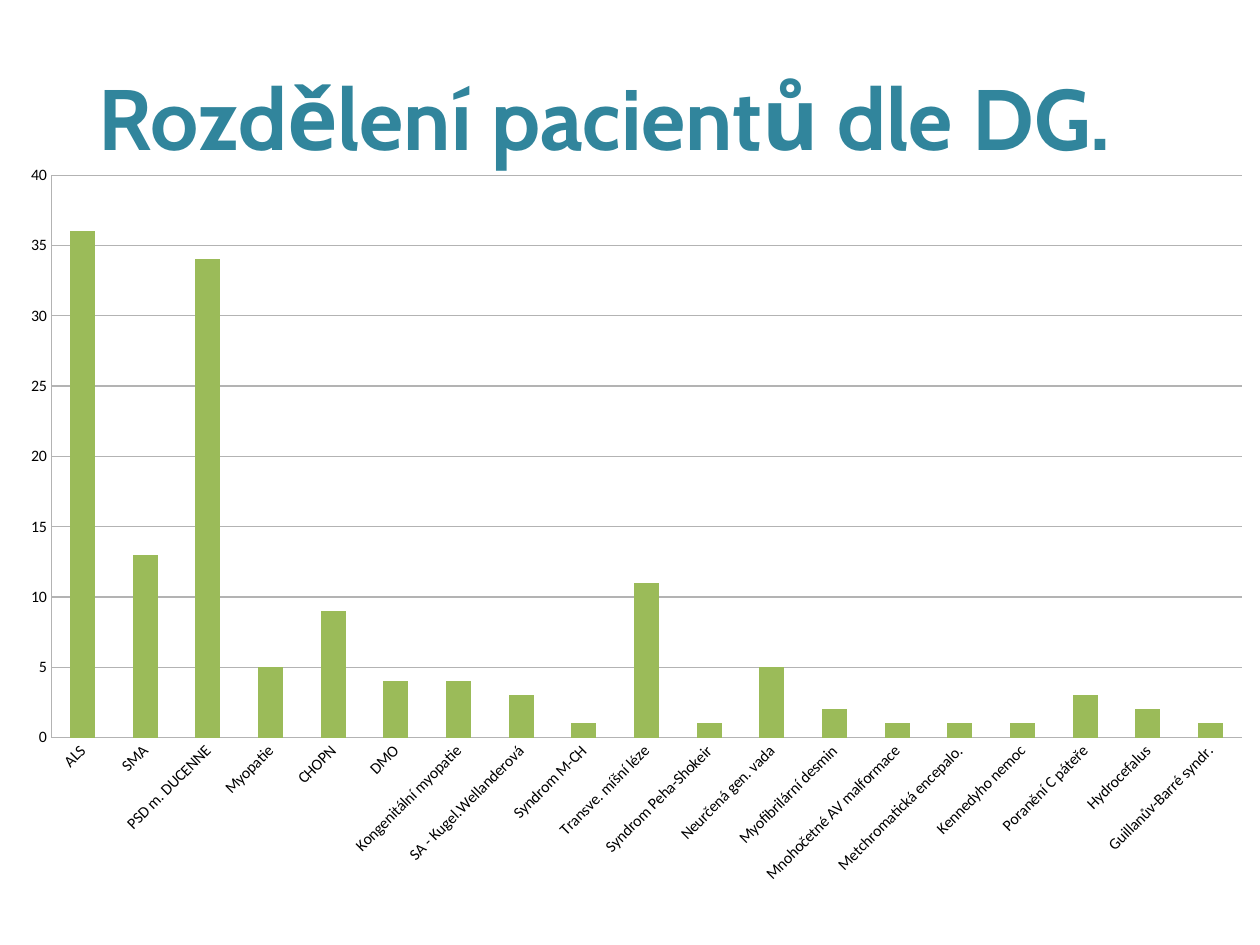
from lxml import etree
from pptx import Presentation
from pptx.chart.data import CategoryChartData
from pptx.dml.color import RGBColor
from pptx.enum.chart import XL_CHART_TYPE as ChartType, XL_TICK_MARK as TickMark
from pptx.enum.text import MSO_ANCHOR as Anchor, PP_ALIGN as Align
from pptx.oxml.ns import qn
from pptx.util import Cm, Inches, Pt

COLORS = {
    name: RGBColor.from_string(value)
    for name, value in {
        "title": "31859C", "bars": "9BBB59", "lines": "B3B3B3", "labels": "000000",
    }.items()
}

PATIENTS = {
    "ALS": 36,
    "SMA": 13,
    "PSD m. DUCENNE": 34,
    "Myopatie": 5,
    "CHOPN": 9,
    "DMO": 4,
    "Kongenitální myopatie": 4,
    "SA - Kugel.Wellanderová": 3,
    "Syndrom M-CH": 1,
    "Transve. míšní léze": 11,
    "Syndrom Peha-Shokeir": 1,
    "Neurčená gen. vada": 5,
    "Myofibrilární desmin": 2,
    "Mnohočetné AV malformace": 1,
    "Metchromatická encepalo.": 1,
    "Kennedyho nemoc": 1,
    "Poranění C páteře": 3,
    "Hydrocefalus": 2,
    "Guillanův-Barré syndr.": 1,
}

prs = Presentation()
prs.slide_width, prs.slide_height = Cm(28), Cm(21)
slide = prs.slides.add_slide(prs.slide_layouts[5])

# Title
title = slide.shapes.title
title.left, title.top = int(prs.slide_width * 0.03), int(prs.slide_height * 0.04)
title.width, title.height = int(prs.slide_width * 0.9), int(prs.slide_height * 0.166)
frame = title.text_frame
frame.margin_left = frame.margin_right = frame.margin_top = frame.margin_bottom = 0
frame.vertical_anchor = Anchor.MIDDLE
frame.word_wrap = True
heading = frame.paragraphs[0]
heading.alignment = Align.CENTER
run = heading.add_run()
run.text = "Rozdělení pacientů dle DG."
run.font.name, run.font.size, run.font.bold = "Cabin", Pt(54), True
run.font.color.rgb = COLORS["title"]

# Patients per diagnosis
data = CategoryChartData()
data.categories = list(PATIENTS)
data.add_series("Series 1", list(PATIENTS.values()))
chart = slide.shapes.add_chart(
    ChartType.COLUMN_CLUSTERED,
    Inches(0.16), Inches(1.22), Inches(10.71), Inches(6.65), data,
).chart
chart.has_legend = chart.has_title = False
chart.font.name, chart.font.size = "Calibri", Pt(10)
chart.font.color.rgb = COLORS["labels"]

bars = chart.plots[0]
bars.vary_by_categories = False
bars.gap_width = 150
bar_fill = bars.series[0].format.fill
bar_fill.solid()
bar_fill.fore_color.rgb = COLORS["bars"]

diagnoses, counts = chart.category_axis, chart.value_axis
counts.minimum_scale, counts.maximum_scale, counts.major_unit = 0, 40, 5
counts.has_major_gridlines = True
for axis in (diagnoses, counts):
    axis.major_tick_mark = axis.minor_tick_mark = TickMark.NONE
    axis.tick_labels.font.size = Pt(10)
for line in (diagnoses.format.line, counts.format.line, counts.major_gridlines.format.line):
    line.color.rgb = COLORS["lines"]
    line.width = Pt(0.75)

# Slanted diagnosis names
label_body = diagnoses._element.find(qn("c:txPr")).find(qn("a:bodyPr"))
label_body.set("rot", str(-45 * 60000))
label_body.set("vert", "horz")

# Plot area as shares of the chart
plot_area = chart._chartSpace.chart.plotArea
for old_layout in plot_area.findall(qn("c:layout")):
    plot_area.remove(old_layout)
layout = etree.Element(qn("c:layout"))
plot_area.insert(0, layout)
manual = etree.SubElement(layout, qn("c:manualLayout"))
for tag, value in (
    ("layoutTarget", "inner"), ("xMode", "edge"), ("yMode", "edge"),
    ("x", "0.027"), ("y", "0.047"), ("w", "0.973"), ("h", "0.74"),
):
    etree.SubElement(manual, qn(f"c:{tag}")).set("val", value)

prs.save("out.pptx")
